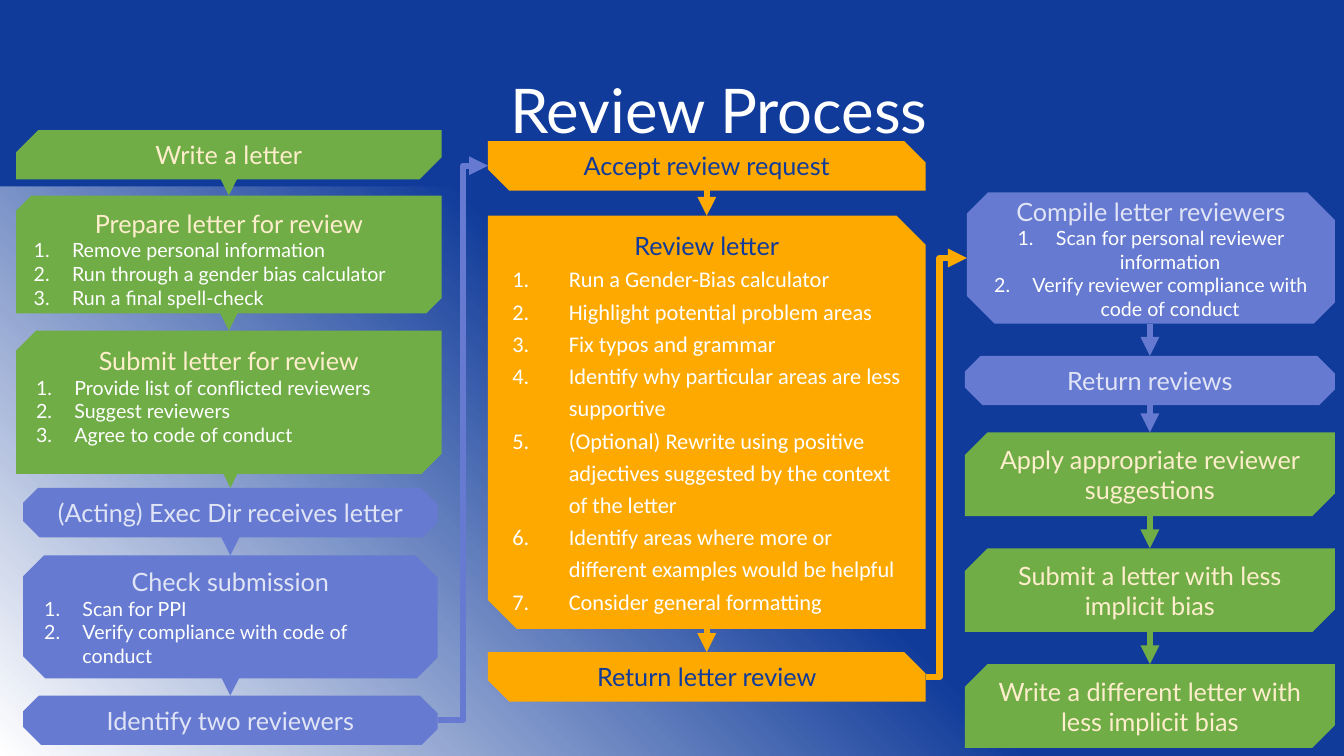
import pptx
import pptx.util
import pptx.dml.color
import pptx.enum.shapes
import pptx.enum.text
import pptx.oxml.ns
from lxml import etree

Inches, Pt = pptx.util.Inches, pptx.util.Pt
qn = pptx.oxml.ns.qn
ALIGN = pptx.enum.text.PP_ALIGN
ANCHOR = pptx.enum.text.MSO_ANCHOR
SHAPE = pptx.enum.shapes.MSO_SHAPE
LINK = pptx.enum.shapes.MSO_CONNECTOR

HEX = {"navy": "103B9A", "white": "FFFFFF", "green": "70AD47", "cream": "FFEECC",
       "violet": "657AD0", "pale": "E0E4F6", "orange": "FEA900"}
# Heading colour for each box colour
HEAD = {"green": "cream", "violet": "pale", "orange": "navy"}
# Column position: left, width
WRITE, CHECK, REVIEW, LAST = (0.16, 4.22), (0.23, 4.11), (4.84, 4.34), (9.57, 3.67)


def color(name):
    return pptx.dml.color.RGBColor.from_string(HEX[name])


def style(para, size, tint, face="Lato"):
    for run in para.runs:
        run.font.size = Pt(size)
        run.font.name = face
        run.font.color.rgb = color(tint)


def number(para, indent):
    props = para._p.get_or_add_pPr()
    props.set("marL", str(Inches(indent)))
    props.set("indent", str(-Inches(indent)))
    etree.SubElement(props, qn("a:buFont"), typeface="+mj-lt")
    etree.SubElement(props, qn("a:buAutoNum"), type="arabicPeriod")


def add_back(slide):
    fill = slide.background.fill
    fill.gradient()
    fill.gradient_angle = 45
    stops = next(slide._element.iter(qn("a:gsLst")))
    for stop in list(stops):
        stops.remove(stop)
    for pos, name, alpha in [(0, "white", 100), (49, "navy", 55),
                             (86, "navy", 75), (100, "navy", 100)]:
        stop = etree.SubElement(stops, qn("a:gs"), pos=str(pos * 1000))
        tint = etree.SubElement(stop, qn("a:srgbClr"), val=HEX[name])
        if alpha < 100:
            etree.SubElement(tint, qn("a:alpha"), val=str(alpha * 1000))


def add_block(slide, kind, tint, left, top, width, height):
    block = slide.shapes.add_shape(kind, Inches(left), Inches(top),
                                   Inches(width), Inches(height))
    block.shadow.inherit = False
    block.fill.solid()
    block.fill.fore_color.rgb = color(tint)
    block.line.fill.background()
    return block


def add_title(slide, text):
    box = slide.shapes.add_textbox(Inches(0.92), Inches(0.4), Inches(12.42), Inches(1.45))
    frame = box.text_frame
    frame.word_wrap = True
    frame.vertical_anchor = ANCHOR.MIDDLE
    frame.text = text
    para = frame.paragraphs[0]
    para.alignment = ALIGN.CENTER
    para.line_spacing = 0.9
    style(para, 44, "white")


def add_step(slide, tint, col, top, height, snips, head, items=(), anchor=ANCHOR.MIDDLE,
             align=ALIGN.LEFT, indent=0.38, size=14, face="Lato", space=None):
    left, width = col
    step = add_block(slide, SHAPE.SNIP_2_DIAG_RECTANGLE, tint, left, top, width, height)
    step.adjustments[0], step.adjustments[1] = snips
    frame = step.text_frame
    frame.word_wrap = True
    frame.vertical_anchor = anchor
    frame.text = head
    frame.paragraphs[0].alignment = ALIGN.CENTER
    style(frame.paragraphs[0], 18, HEAD[tint])
    for item in items:
        para = frame.add_paragraph()
        para.text = item
        para.alignment = align
        if space:
            para.line_spacing = space
        number(para, indent)
        style(para, size, "white", face)
    return step


def add_arrow(slide, kind, tint, start, end):
    arrow = slide.shapes.add_connector(kind, *start, *end)
    arrow.line.color.rgb = color(tint)
    arrow.line.width = Pt(4.5)
    etree.SubElement(arrow.line._get_or_add_ln(), qn("a:tailEnd"), type="triangle")
    etree.SubElement(arrow._element.spPr, qn("a:effectLst"))
    return arrow


def add_drop(slide, tint, upper, lower):
    mid = lower.left + lower.width // 2
    add_arrow(slide, LINK.STRAIGHT, tint, (mid, upper.top + upper.height), (mid, lower.top))


def add_bend(slide, tint, source, target, turn):
    start = source.left + source.width, source.top + source.height // 2
    end = target.left, target.top + target.height // 2
    bend = add_arrow(slide, LINK.ELBOW, tint, start, end)
    guides = next(bend._element.iter(qn("a:avLst")), None)
    if guides is None:
        guides = etree.SubElement(next(bend._element.iter(qn("a:prstGeom"))), qn("a:avLst"))
    etree.SubElement(guides, qn("a:gd"), name="adj1", fmla=f"val {round(turn * 100000)}")


def main():
    deck = pptx.Presentation()
    deck.slide_width, deck.slide_height = Inches(13.33), Inches(7.5)
    slide = deck.slides.add_slide(deck.slide_layouts[6])

    # Backdrop and title
    add_back(slide)
    add_block(slide, SHAPE.RECTANGLE, "navy", 0, 0, 13.33, 1.85)
    add_title(slide, "Review Process")

    # Left column: writing and checking
    left = [
        add_step(slide, "green", WRITE, 1.29, 0.49, (0.45, 0), "Write a letter"),
        add_step(slide, "green", WRITE, 1.94, 1.17, (0.13, 0), "Prepare letter for review",
                 ["Remove personal information", "Run through a gender bias calculator",
                  "Run a final spell-check"], anchor=ANCHOR.TOP),
        add_step(slide, "green", WRITE, 3.28, 1.42, (0.14, 0), "Submit letter for review",
                 ["Provide list of conflicted reviewers", "Suggest reviewers",
                  "Agree to code of conduct"], anchor=ANCHOR.TOP),
        add_step(slide, "violet", CHECK, 4.84, 0.49, (0.3, 0.33),
                 "(Acting) Exec Dir receives letter"),
        add_step(slide, "violet", CHECK, 5.51, 1.22, (0.17, 0.18), "Check submission",
                 ["Scan for PPI", "Verify compliance with code of conduct"]),
        add_step(slide, "violet", CHECK, 6.9, 0.49, (0.32, 0.36), "Identify two reviewers"),
    ]

    # Middle column: the review itself
    middle = [
        add_step(slide, "orange", REVIEW, 1.4, 0.49, (0, 0.43), "Accept review request"),
        add_step(slide, "orange", REVIEW, 2.14, 4.1, (0, 0.07), "Review letter",
                 ["Run a Gender-Bias calculator", "Highlight potential problem areas",
                  "Fix typos and grammar", "Identify why particular areas are less supportive",
                  "(Optional) Rewrite using positive adjectives suggested by the context "
                  "of the letter",
                  "Identify areas where more or different examples would be helpful",
                  "Consider general formatting"],
                 indent=0.56, size=16, face="Calibri", space=1.2),
        add_step(slide, "orange", REVIEW, 6.47, 0.49, (0, 0.43), "Return letter review"),
    ]

    # Right column: returning and rewriting
    right = [
        add_step(slide, "violet", (9.59, 3.65), 1.91, 1.3, (0.16, 0.21),
                 "Compile letter reviewers",
                 ["Scan for personal reviewer information",
                  "Verify reviewer compliance with code of conduct"], align=ALIGN.CENTER),
        add_step(slide, "violet", LAST, 3.53, 0.49, (0.32, 0.36), "Return reviews"),
    ]
    tasks = ["Apply appropriate reviewer suggestions", "Submit a letter with less implicit bias",
             "Write a different letter with less implicit bias"]
    for row, task in enumerate(tasks):
        right.append(add_step(slide, "green", LAST, 4.29 + 1.15 * row, 0.83, (0.27, 0), task))

    # Arrows down each column, then across columns
    for steps, tints in [(left, ["green"] * 3 + ["violet"] * 2), (middle, ["orange"] * 2),
                         (right, ["violet"] * 2 + ["green"] * 2)]:
        for tint, upper, lower in zip(tints, steps, steps[1:]):
            add_drop(slide, tint, upper, lower)
    add_bend(slide, "violet", left[-1], middle[0], 0.5)
    add_bend(slide, "orange", middle[-1], right[0], 0.34)

    deck.save("out.pptx")


if __name__ == "__main__":
    main()
